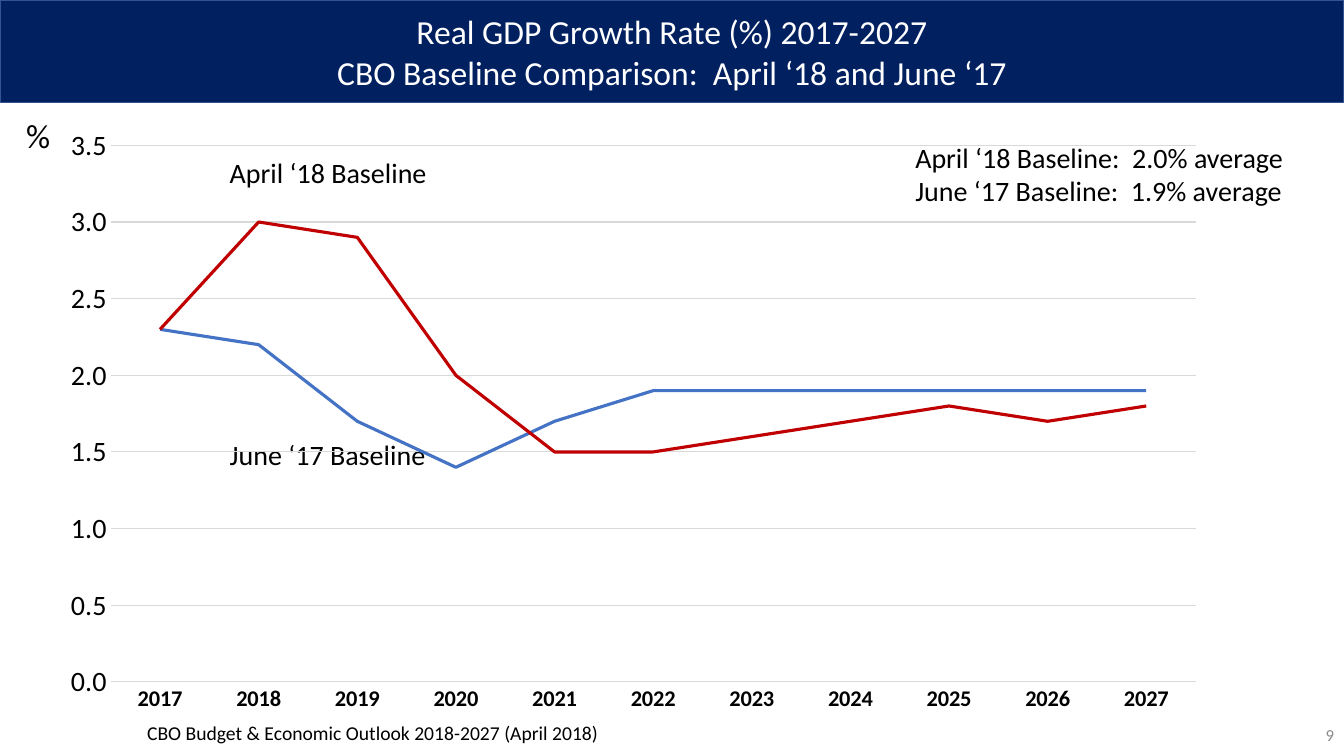
from lxml import etree
from pptx import Presentation
from pptx.chart.data import CategoryChartData as ChartData
from pptx.dml.color import RGBColor as Rgb
from pptx.enum.chart import XL_CHART_TYPE as Kind, XL_TICK_MARK as Tick
from pptx.enum.text import MSO_ANCHOR as Anchor, MSO_AUTO_SIZE as Fit, PP_ALIGN as Align
from pptx.oxml import parse_xml
from pptx.oxml.ns import nsdecls, qn
from pptx.util import Inches, Pt

NAVY = Rgb(0x00, 0x20, 0x60)
EDGE = Rgb(0x32, 0x54, 0x91)
WHITE = Rgb(0xFF, 0xFF, 0xFF)
BLACK = Rgb(0x00, 0x00, 0x00)
GRAY = Rgb(0x8C, 0x8C, 0x8C)
GRID = Rgb(0xD9, 0xD9, 0xD9)
BLUE = Rgb(0x44, 0x72, 0xC4)
RED = Rgb(0xC0, 0x00, 0x00)

YEARS = [str(year) for year in range(2017, 2028)]
LINES = [
    ("June ‘17 Baseline", BLUE, [2.3, 2.2, 1.7, 1.4, 1.7, 1.9, 1.9, 1.9, 1.9, 1.9, 1.9]),
    ("April ‘18 Baseline", RED, [2.3, 3.0, 2.9, 2.0, 1.5, 1.5, 1.6, 1.7, 1.8, 1.7, 1.8]),
]
PLOT = {"x": 0.05, "y": 0.05, "w": 0.93, "h": 0.88}


def apply(item, values):
    """Set each named attribute on the item."""
    for name, value in values.items():
        setattr(item, name, value)


class Deck:
    """Holds the font and the current slide."""

    def __init__(self, slide, face="Calibri"):
        """Keep the slide and the typeface."""
        self.slide, self.face = slide, face

    def style(self, font, size, color, bold=False):
        """Format a font."""
        apply(font, {"name": self.face, "size": Pt(size), "bold": bold})
        font.color.rgb = color

    def stroke(self, line, color, width):
        """Format a line."""
        line.color.rgb = color
        line.width = Pt(width)

    def fill(self, frame, rows, size, color, align):
        """Fill a text frame with one paragraph per row."""
        for i, row in enumerate(rows):
            para = frame.add_paragraph() if i else frame.paragraphs[0]
            para.alignment = align
            run = para.add_run()
            run.text = row
            self.style(run.font, size, color)

    def title(self, rows, box):
        """Turn the title placeholder into a banner."""
        shape = self.slide.shapes.title
        apply(shape, dict(zip(("left", "top", "width", "height"), map(Inches, box))))
        shape.fill.solid()
        shape.fill.fore_color.rgb = NAVY
        self.stroke(shape.line, EDGE, 1)
        frame = shape.text_frame
        apply(frame, {"auto_size": Fit.NONE, "vertical_anchor": Anchor.MIDDLE})
        self.fill(frame, rows, 24, WHITE, Align.CENTER)

    def text(self, rows, box, size, color=BLACK, align=Align.LEFT, wrap=False, **form):
        """Add a text box."""
        frame = self.slide.shapes.add_textbox(*map(Inches, box)).text_frame
        apply(frame, {"word_wrap": wrap, **form})
        self.fill(frame, rows, size, color, align)

    def chart(self, box):
        """Add the line chart."""
        data = ChartData(number_format="0.0")
        data.categories = YEARS
        for name, _, values in LINES:
            data.add_series(name, values)
        chart = self.slide.shapes.add_chart(Kind.LINE, *map(Inches, box), data).chart
        apply(chart, {"has_legend": False, "has_title": False})
        self.style(chart.font, 10, BLACK)
        plot = chart.plots[0]
        plot.vary_by_categories = False
        for series, (_, color, _) in zip(plot.series, LINES):
            series.smooth = False
            self.stroke(series.format.line, color, 2.25)
        years, rates = chart.category_axis, chart.value_axis
        for axis, size, bold in ((years, 16, True), (rates, 20, False)):
            apply(axis, {"major_tick_mark": Tick.NONE, "minor_tick_mark": Tick.NONE})
            self.style(axis.tick_labels.font, size, BLACK, bold)
        self.stroke(years.format.line, GRID, 0.75)
        apply(rates, {"minimum_scale": 0, "maximum_scale": 3.5, "major_unit": 0.5})
        apply(rates.tick_labels, {"number_format": "0.0", "number_format_is_linked": False})
        rates.format.line.fill.background()
        self.stroke(rates.major_gridlines.format.line, GRID, 0.75)
        self.place(chart)

    def place(self, chart):
        """Fix the inner plot area inside the chart."""
        area = chart.element.find(".//" + qn("c:plotArea")) if hasattr(chart, "element") else None
        for old in area.findall(qn("c:layout")):
            area.remove(old)
        layout = parse_xml(f"<c:layout {nsdecls('c')}><c:manualLayout/></c:layout>")
        modes = {"layoutTarget": "inner", "xMode": "edge", "yMode": "edge"}
        for name, value in {**modes, **PLOT}.items():
            etree.SubElement(layout[0], qn("c:" + name)).set("val", str(value))
        area.insert(0, layout)


def main():
    """Build and save the slide."""
    show = Presentation()
    apply(show, {"slide_width": Inches(13.33), "slide_height": Inches(7.5)})
    deck = Deck(show.slides.add_slide(show.slide_layouts[5]))
    deck.title(["Real GDP Growth Rate (%) 2017-2027",
                "CBO Baseline Comparison:  April ‘18 and June ‘17"], (0, 0, 13.33, 1.02))
    deck.text(["9"], (10.33, 7.09, 3, 0.4), 12, GRAY, Align.RIGHT, True,
              vertical_anchor=Anchor.MIDDLE)
    grow = {"auto_size": Fit.SHAPE_TO_FIT_TEXT}
    deck.text(["%"], (0.16, 1.09, 0.44, 0.5), 24, **grow)
    deck.text(["April ‘18 Baseline"], (2.18, 1.49, 2.18, 0.44), 20, **grow)
    deck.text(["June ‘17 Baseline"], (2.18, 4.29, 2.22, 0.44), 20, **grow)
    deck.chart((0.52, 1.14, 11.57, 6.05))
    deck.text(["CBO Budget & Economic Outlook 2018-2027 (April 2018)"],
              (1.36, 7.1, 4.72, 0.34), 14, **grow)
    deck.text(["April ‘18 Baseline:  2.0% average", "June ‘17 Baseline:  1.9% average"],
              (8.98, 1.34, 4.13, 0.77), 20, wrap=True, **grow)
    show.save("out.pptx")


if __name__ == "__main__":
    main()
